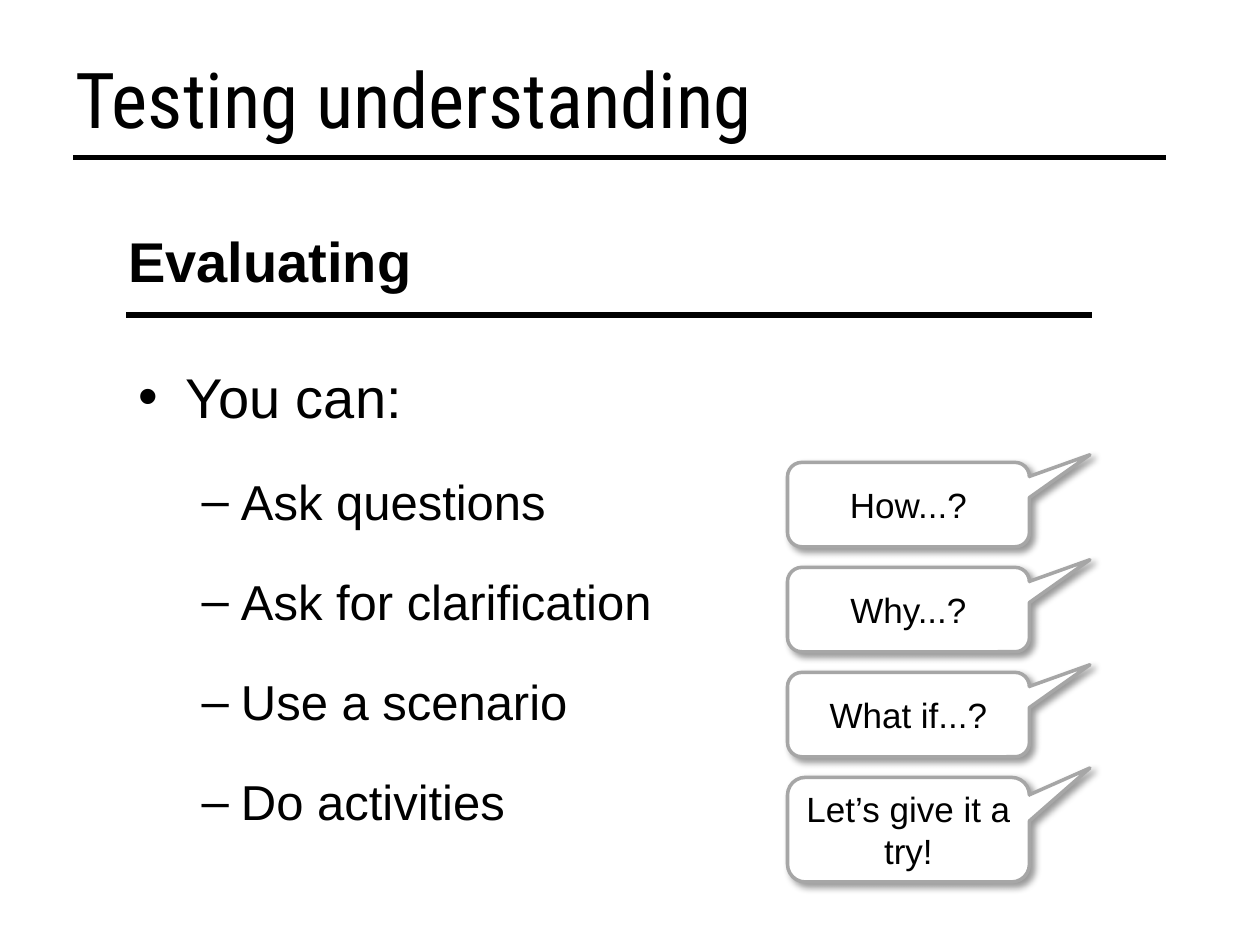
from lxml import etree
from pptx import Presentation
from pptx.dml.color import RGBColor
from pptx.enum.shapes import MSO_CONNECTOR, MSO_SHAPE
from pptx.enum.text import MSO_ANCHOR, MSO_AUTO_SIZE, PP_ALIGN
from pptx.oxml import parse_xml
from pptx.oxml.ns import nsdecls, qn
from pptx.util import Inches, Pt

STRAIGHT = MSO_CONNECTOR.STRAIGHT
CALLOUT = MSO_SHAPE.ROUNDED_RECTANGULAR_CALLOUT
MIDDLE = MSO_ANCHOR.MIDDLE
NO_AUTOFIT = MSO_AUTO_SIZE.NONE
LEFT, CENTER = PP_ALIGN.LEFT, PP_ALIGN.CENTER

BLACK, WHITE, GRAY = "000000", "FFFFFF", "A6A6A6"
SHADOW = (
    f'<a:effectLst {nsdecls("a")}>'
    '<a:outerShdw blurRad="50800" dist="38100" dir="2700000" algn="tl" rotWithShape="0">'
    f'<a:srgbClr val="{BLACK}"><a:alpha val="40000"/></a:srgbClr>'
    "</a:outerShdw></a:effectLst>"
)


def color(target, value):
    target.rgb = RGBColor.from_string(value)


def style(paragraph, size, name="Arial", align=LEFT):
    paragraph.alignment = align
    paragraph.font.size = Pt(size)
    paragraph.font.name = name
    color(paragraph.font.color, BLACK)


presentation = Presentation()
presentation.slide_width = Inches(10)
presentation.slide_height = Inches(7.5)
slide = presentation.slides.add_slide(presentation.slide_layouts[1])
shapes = slide.shapes

title = shapes.title
title.left, title.top, title.width, title.height = map(Inches, (0.5, 0.3, 9, 0.95))
title.text_frame.text = "Testing understanding"
title.text_frame.vertical_anchor = MIDDLE
title.text_frame.auto_size = NO_AUTOFIT
style(title.text_frame.paragraphs[0], 44, "Roboto Condensed")

body = slide.placeholders[1]
body.left, body.top, body.width, body.height = map(Inches, (1, 2.83, 8.25, 4.42))
body.text_frame.text = "\n".join(
    ["You can:", "Ask questions", "Ask for clarification", "Use a scenario", "Do activities"]
)
body.text_frame.auto_size = NO_AUTOFIT
for index, paragraph in enumerate(body.text_frame.paragraphs):
    paragraph.level = min(index, 1)
    paragraph.space_after = Pt(18)
    style(paragraph, 28 if index else 32)

heading = shapes.add_textbox(*map(Inches, (0.92, 1.75, 8.33, 0.83)))
heading.text_frame.word_wrap = True
heading.text_frame.text = "Evaluating"
style(heading.text_frame.paragraphs[0], 32)
heading.text_frame.paragraphs[0].font.bold = True

for start, end, top in [(0.58, 9.25, 1.25), (1, 8.67, 2.5)]:
    rule = shapes.add_connector(STRAIGHT, *map(Inches, (start, top, end, top)))
    rule.line.width = Pt(3)
    color(rule.line.color, BLACK)
    etree.SubElement(rule._element.spPr, qn("a:effectLst"))

first_top, row_step = 3.67, 2.5 / 3
callouts = [("How...?", 0.67), ("Why...?", 0.67), ("What if...?", 0.67), ("Let’s give it a try!", 0.83)]
for row, (words, height) in enumerate(callouts):
    top = first_top + row * row_step
    callout = shapes.add_shape(CALLOUT, *map(Inches, (6.25, top, 1.92, height)))
    for position, value in enumerate((0.75, -0.59, 0.17)):
        callout.adjustments[position] = value
    callout.fill.solid()
    color(callout.fill.fore_color, WHITE)
    callout.line.width = Pt(2)
    color(callout.line.color, GRAY)
    callout._element.spPr.append(parse_xml(SHADOW))
    callout.text_frame.word_wrap = True
    callout.text_frame.vertical_anchor = MIDDLE
    callout.text_frame.text = words
    style(callout.text_frame.paragraphs[0], 20, align=CENTER)

presentation.save("out.pptx")
